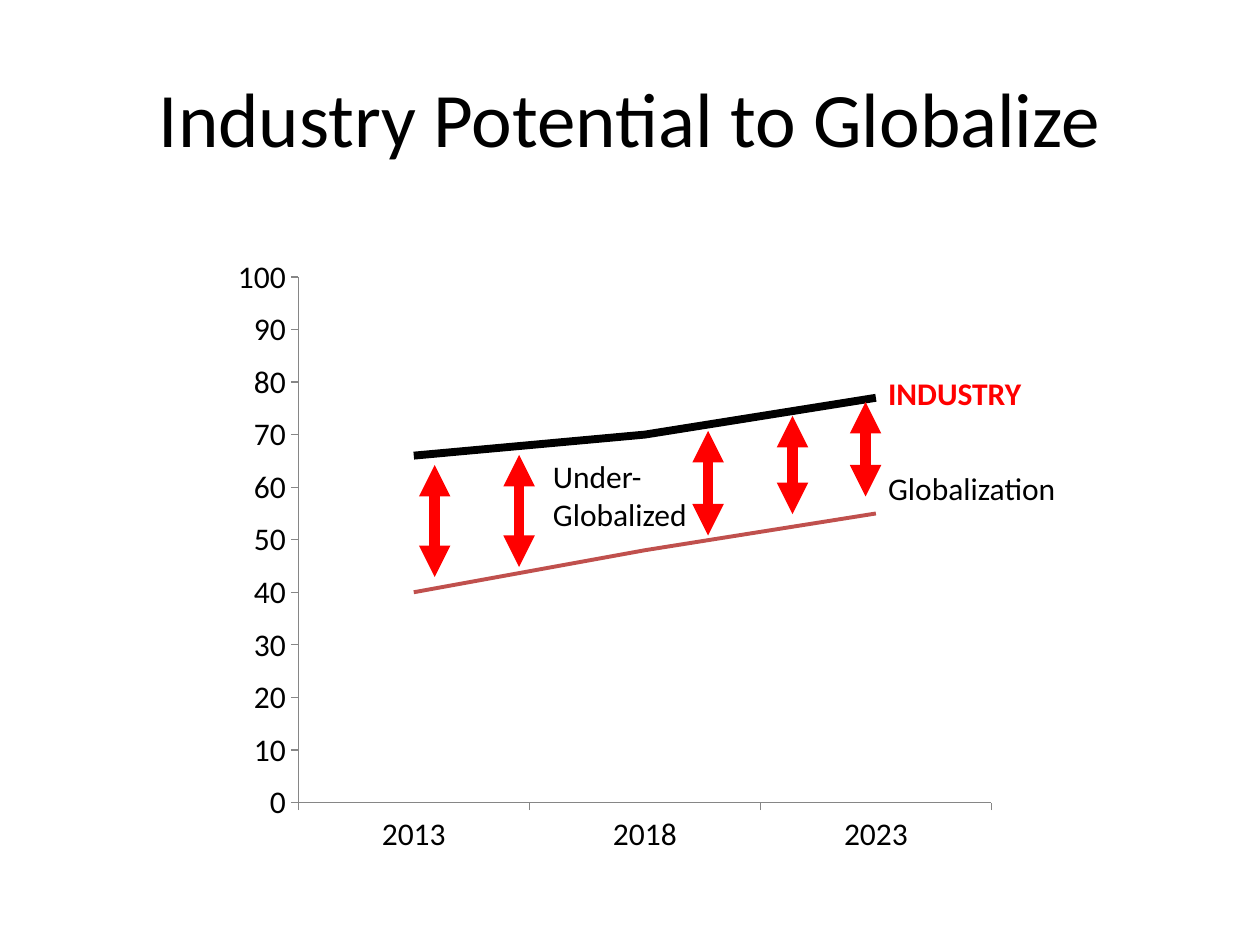
from lxml import etree
from pptx import Presentation
from pptx.chart.data import CategoryChartData
from pptx.dml.color import RGBColor
from pptx.enum.chart import XL_CHART_TYPE, XL_MARKER_STYLE, XL_TICK_MARK
from pptx.enum.shapes import MSO_CONNECTOR
from pptx.enum.text import MSO_ANCHOR, MSO_AUTO_SIZE, PP_ALIGN
from pptx.oxml import parse_xml
from pptx.oxml.ns import nsdecls, qn
from pptx.util import Inches, Pt

LINE_CHART = XL_CHART_TYPE.LINE
NO_MARKER = XL_MARKER_STYLE.NONE
TICK_OUTSIDE = XL_TICK_MARK.OUTSIDE
STRAIGHT = MSO_CONNECTOR.STRAIGHT
MIDDLE = MSO_ANCHOR.MIDDLE
GROW = MSO_AUTO_SIZE.SHAPE_TO_FIT_TEXT
CENTER = PP_ALIGN.CENTER

BLACK = RGBColor(0x00, 0x00, 0x00)
RED = RGBColor(0xFF, 0x00, 0x00)
BRICK = RGBColor(0xC0, 0x50, 0x4D)
GRAY = RGBColor(0x86, 0x86, 0x86)
FONT = "Calibri"

CATEGORIES = ("2013", "2018", "2023")
# Name, values, colour, line width in points
SERIES = (
    ("Series 1", (66, 70, 77), BLACK, 4.5),
    ("Series 2", (40, 48, 55), BRICK, 2.25),
)
PLOT_AREA = {"x": 0.1, "y": 0.04, "w": 0.825, "h": 0.843}

# Text, left, top, width, height, colour, bold
LABELS = (
    ("INDUSTRY", 6.95, 2.92, 1.27, 0.4, RED, True),
    ("Globalization", 6.95, 3.67, 1.55, 0.4, BLACK, False),
    ("Under-\nGlobalized", 4.29, 3.58, 1.28, 0.71, BLACK, False),
)
# Centre, top, bottom of each arrow across the gap
GAP_ARROWS = (
    (3.45, 3.69, 4.58),
    (4.12, 3.61, 4.5),
    (5.62, 3.42, 4.25),
    (6.29, 3.3, 4.08),
    (6.87, 3.19, 3.94),
)


def format_font(font, size, color, bold=False):
    font.name = FONT
    font.size = Pt(size)
    font.bold = bold
    font.color.rgb = color


def format_title(slide, text):
    title = slide.shapes.title
    title.left, title.top = Inches(0.5), Inches(0.3)
    title.width, title.height = Inches(9), Inches(1.25)
    title.text_frame.text = text
    title.text_frame.vertical_anchor = MIDDLE
    paragraph = title.text_frame.paragraphs[0]
    paragraph.alignment = CENTER
    format_font(paragraph.runs[0].font, 44, BLACK)


def set_plot_area(chart):
    """Fix the inner plot area as fractions of the chart."""
    plot_area = chart.plots[0]._element.getparent()
    for old_layout in plot_area.findall(qn("c:layout")):
        plot_area.remove(old_layout)
    modes = "".join(f'<c:{side}Mode val="edge"/>' for side in "xy")
    sizes = "".join(f'<c:{key} val="{value}"/>' for key, value in PLOT_AREA.items())
    plot_area.insert(0, parse_xml(
        f'<c:layout {nsdecls("c")}><c:manualLayout><c:layoutTarget val="inner"/>'
        f"{modes}{sizes}</c:manualLayout></c:layout>"))


def add_line_chart(slide):
    chart_data = CategoryChartData()
    chart_data.categories = CATEGORIES
    for name, values, _, _ in SERIES:
        chart_data.add_series(name, values)
    chart = slide.shapes.add_chart(
        LINE_CHART, Inches(1.7), Inches(2), Inches(6.67), Inches(4.95), chart_data).chart
    chart.has_legend = False
    chart.has_title = False
    format_font(chart.font, 18, BLACK)
    set_plot_area(chart)

    # Axes
    for axis in (chart.category_axis, chart.value_axis):
        axis.has_major_gridlines = False
        axis.major_tick_mark = TICK_OUTSIDE
        axis.format.line.color.rgb = GRAY
        axis.format.line.width = Pt(0.75)
    chart.value_axis.minimum_scale = 0
    chart.value_axis.maximum_scale = 100
    chart.value_axis.major_unit = 10

    # Lines
    plot = chart.plots[0]
    plot.vary_by_categories = False
    for series, (_, _, color, width) in zip(plot.series, SERIES):
        series.smooth = False
        series.marker.style = NO_MARKER
        series.format.line.color.rgb = color
        series.format.line.width = Pt(width)


def add_label(slide, text, left, top, width, height, color, bold):
    label = slide.shapes.add_textbox(Inches(left), Inches(top), Inches(width), Inches(height))
    text_frame = label.text_frame
    text_frame.word_wrap = False
    text_frame.auto_size = GROW
    text_frame.text = text
    for paragraph in text_frame.paragraphs:
        format_font(paragraph.runs[0].font, 18, color, bold)


def add_gap_arrow(slide, center, top, bottom):
    arrow = slide.shapes.add_connector(
        STRAIGHT, Inches(center), Inches(top), Inches(center), Inches(bottom))
    arrow.line.color.rgb = RED
    arrow.line.width = Pt(6)
    line = arrow.line._get_or_add_ln()
    for end in ("a:headEnd", "a:tailEnd"):
        etree.SubElement(line, qn(end), type="triangle")
    etree.SubElement(arrow._element.spPr, qn("a:effectLst"))


def main():
    presentation = Presentation()
    presentation.slide_width = Inches(10)
    presentation.slide_height = Inches(7.5)
    slide = presentation.slides.add_slide(presentation.slide_layouts[5])
    format_title(slide, "Industry Potential to Globalize")
    add_line_chart(slide)
    for label in LABELS:
        add_label(slide, *label)
    for gap_arrow in GAP_ARROWS:
        add_gap_arrow(slide, *gap_arrow)
    presentation.save("out.pptx")


if __name__ == "__main__":
    main()
